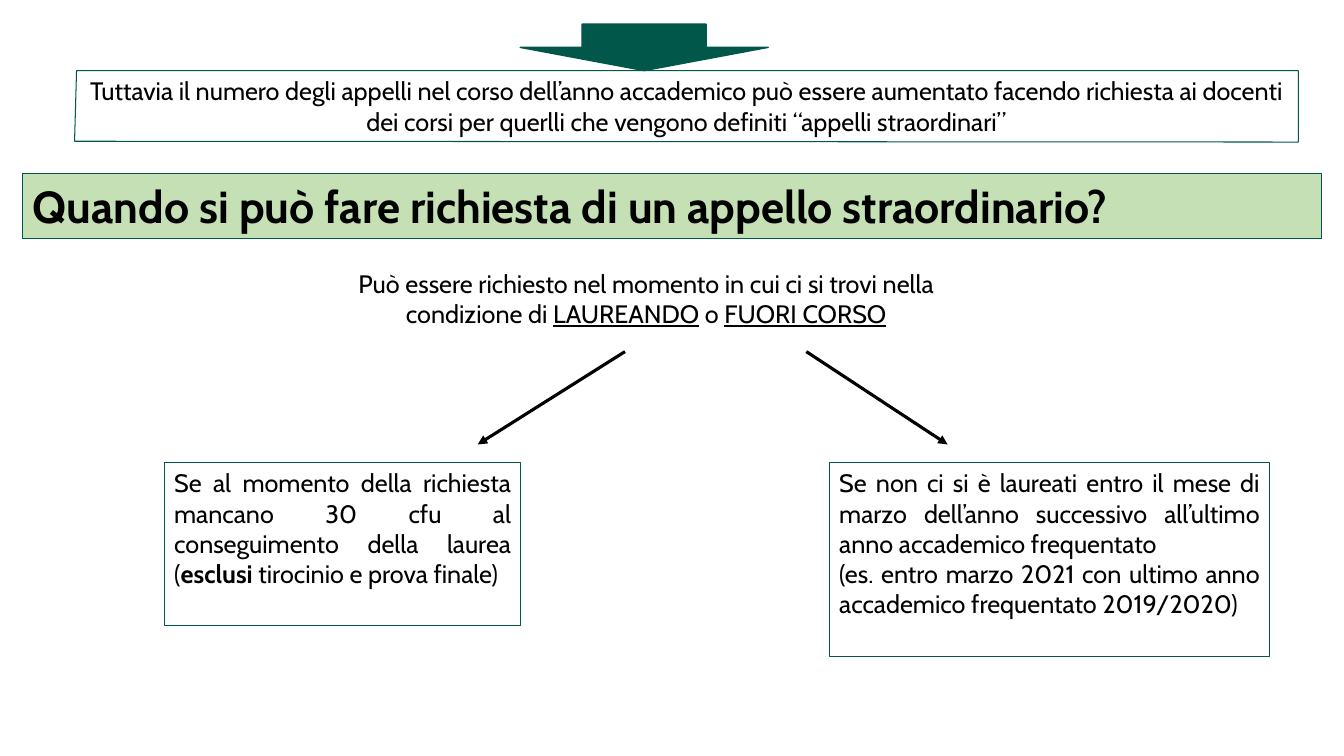
from dataclasses import dataclass

from lxml.etree import SubElement
from pptx import Presentation
from pptx.dml.color import RGBColor
from pptx.enum.shapes import MSO_CONNECTOR, MSO_SHAPE
from pptx.enum.text import MSO_ANCHOR, PP_ALIGN
from pptx.oxml.ns import qn
from pptx.util import Cm, Pt


@dataclass(frozen=True)
class Theme:
    font: str = "Cabin"
    ink: RGBColor = RGBColor(0, 0, 0)
    green: RGBColor = RGBColor(0x00, 0x57, 0x4A)
    pale: RGBColor = RGBColor(0xC5, 0xE0, 0xB4)
    body: Pt = Pt(18)
    title: Pt = Pt(32)
    thin: Pt = Pt(0.75)
    edge: Pt = Pt(1)
    thick: Pt = Pt(2.25)


THEME = Theme()


def paint(shape, fill=None, width=THEME.thin):
    shape.shadow.inherit = False
    if fill is None:
        shape.fill.background()
    else:
        shape.fill.solid()
        shape.fill.fore_color.rgb = fill
    shape.line.color.rgb = THEME.green
    shape.line.width = width


def write(shape, paras, align, size=THEME.body, bold=None):
    frame = shape.text_frame
    frame.word_wrap = True
    frame.vertical_anchor = MSO_ANCHOR.TOP
    for index, parts in enumerate(paras):
        para = frame.paragraphs[0] if index == 0 else frame.add_paragraph()
        para.alignment = align
        font = para.font
        font.name, font.size, font.bold = THEME.font, size, bold
        font.color.rgb = THEME.ink
        for text, style in parts:
            run = para.add_run()
            run.text = text
            if style:
                setattr(run.font, style, True)


def add_box(slide, place, paras, align=PP_ALIGN.JUSTIFY, fill=None, **style):
    box = slide.shapes.add_shape(MSO_SHAPE.RECTANGLE, *map(Cm, place))
    paint(box, fill)
    write(box, paras, align, **style)


def add_frame(slide, points, paras):
    start, *rest = [(Cm(x), Cm(y)) for x, y in points]
    outline = slide.shapes.build_freeform(*start)
    outline.add_line_segments(rest, close=True)
    shape = outline.convert_to_shape()
    paint(shape)
    write(shape, paras, PP_ALIGN.CENTER)


def add_label(slide, place, paras):
    write(slide.shapes.add_textbox(*map(Cm, place)), paras, PP_ALIGN.CENTER)


def add_arrow(slide, *ends):
    arrow = slide.shapes.add_connector(MSO_CONNECTOR.STRAIGHT, *map(Cm, ends))
    arrow.line.color.rgb = THEME.ink
    arrow.line.width = THEME.thick
    SubElement(arrow.line._get_or_add_ln(), qn("a:tailEnd"), type="triangle")
    SubElement(arrow._element.spPr, qn("a:effectLst"))


def main():
    """Build the slide on extra exam sessions and save it."""
    deck = Presentation()
    deck.slide_width, deck.slide_height = Cm(33.87), Cm(19.05)
    slide = deck.slides.add_slide(deck.slide_layouts[6])

    add_frame(slide, [(1.93, 1.78), (32.72, 1.78), (32.72, 3.58), (1.88, 3.56)], [
        [("Tuttavia il numero degli appelli nel corso dell’anno accademico può "
          "essere aumentato facendo richiesta ai docenti dei corsi per querlli "
          "che vengono definiti “appelli straordinari”", None)]])
    for start, end in ((15.75, 12.04), (20.32, 23.88)):
        add_arrow(slide, start, 8.86, end, 11.2)
    add_box(slide, (4.14, 11.66, 8.99, 4.11), [
        [("Se al momento della richiesta mancano 30 cfu al conseguimento "
          "della laurea (", None),
         ("esclusi", "bold"), (" tirocinio e prova finale)", None)]])
    add_box(slide, (20.9, 11.66, 11.1, 4.88), [
        [("Se non ci si è laureati entro il mese di marzo dell’anno successivo "
          "all’ultimo anno accademico frequentato", None)],
        [("(es. entro marzo 2021 con ultimo anno accademico frequentato "
          "2019/2020)", None)]])
    add_box(slide, (0.58, 4.37, 32.72, 1.63), [
        [("Quando si può fare richiesta di un appello straordinario?", None)]],
        PP_ALIGN.LEFT, THEME.pale, size=THEME.title, bold=True)
    add_label(slide, (7.32, 6.63, 17.93, 1.8), [
        [("Può essere richiesto nel momento in cui ci si trovi nella "
          "condizione di ", None),
         ("LAUREANDO", "underline"), (" o ", None),
         ("FUORI CORSO", "underline")]])
    down = slide.shapes.add_shape(
        MSO_SHAPE.DOWN_ARROW, *map(Cm, (13.11, 0.61, 6.25, 1.17)))
    paint(down, THEME.green, THEME.edge)

    deck.save("out.pptx")


if __name__ == "__main__":
    main()
